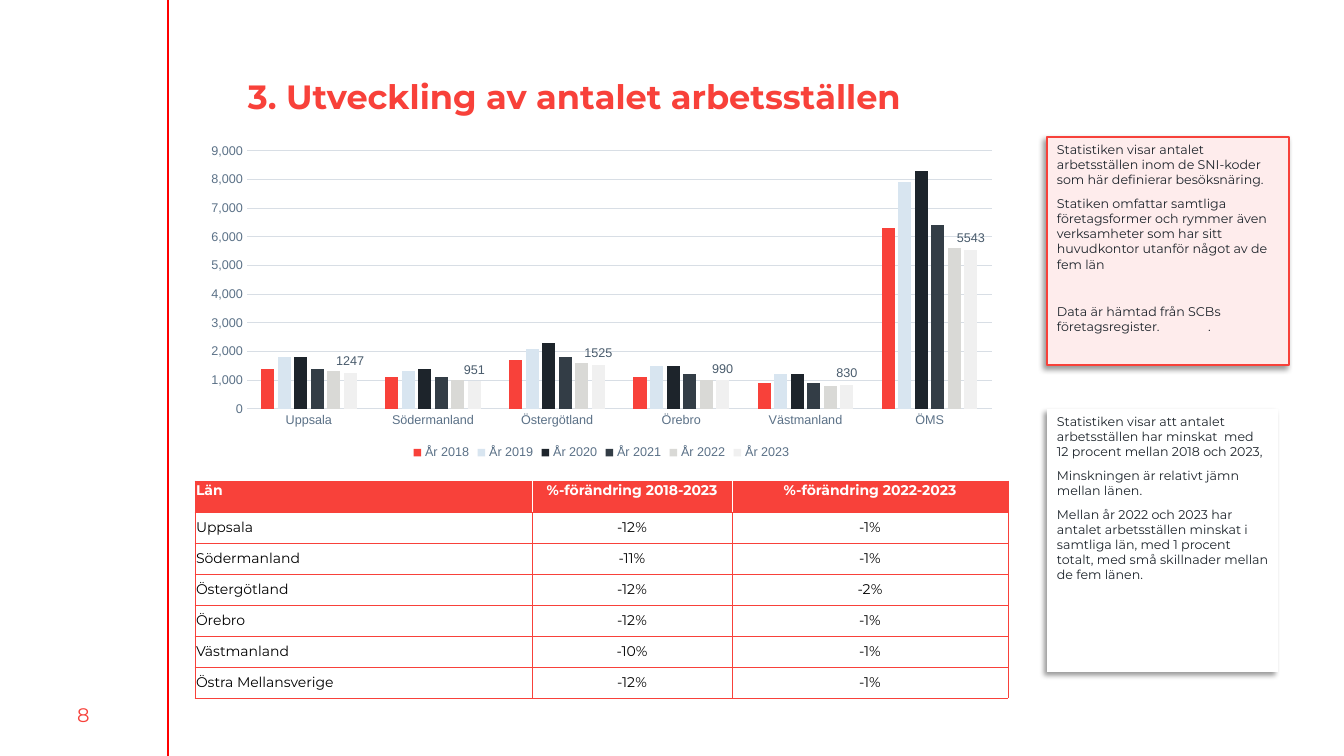
from dataclasses import dataclass

from lxml import etree
from pptx import Presentation
from pptx.chart.data import CategoryChartData
from pptx.dml.color import RGBColor
from pptx.enum.chart import XL_CHART_TYPE, XL_LABEL_POSITION, XL_LEGEND_POSITION, XL_TICK_MARK
from pptx.enum.shapes import MSO_CONNECTOR, MSO_SHAPE
from pptx.enum.text import MSO_ANCHOR, MSO_AUTO_SIZE, PP_ALIGN
from pptx.oxml.ns import qn
from pptx.util import Emu, Pt

COLUMN_CLUSTERED = XL_CHART_TYPE.COLUMN_CLUSTERED
OUTSIDE_END = XL_LABEL_POSITION.OUTSIDE_END
BOTTOM = XL_LEGEND_POSITION.BOTTOM
NO_TICK = XL_TICK_MARK.NONE
STRAIGHT = MSO_CONNECTOR.STRAIGHT
RECTANGLE = MSO_SHAPE.RECTANGLE
TOP, MIDDLE = MSO_ANCHOR.TOP, MSO_ANCHOR.MIDDLE
NO_AUTOFIT = MSO_AUTO_SIZE.NONE
LEFT, CENTER = PP_ALIGN.LEFT, PP_ALIGN.CENTER

# Content
TITLE = "3. Utveckling av antalet arbetsställen"
PAGE_NUMBER = "8"
CATEGORIES = ["Uppsala", "Södermanland", "Östergötland", "Örebro", "Västmanland", "ÖMS"]
SERIES = [
    ("År 2018", "F8413A", [1400, 1100, 1700, 1100, 900, 6300]),
    ("År 2019", "D8E5F0", [1800, 1300, 2100, 1500, 1200, 7900]),
    ("År 2020", "1D242B", [1800, 1400, 2300, 1500, 1200, 8300]),
    ("År 2021", "333D46", [1400, 1100, 1800, 1200, 900, 6400]),
    ("År 2022", "D9D9D6", [1300, 1000, 1600, 1000, 800, 5600]),
    ("År 2023", "F0F0F0", [1247, 951, 1525, 990, 830, 5543]),
]
TABLE_ROWS = [
    ("Län", "%-förändring 2018-2023", "%-förändring 2022-2023"),
    ("Uppsala", "-12%", "-1%"),
    ("Södermanland", "-11%", "-1%"),
    ("Östergötland", "-12%", "-2%"),
    ("Örebro", "-12%", "-1%"),
    ("Västmanland", "-10%", "-1%"),
    ("Östra Mellansverige", "-12%", "-1%"),
]
# Each paragraph: space before in points, text
SOURCE_NOTE = [
    (0, "Statistiken visar antalet arbetsställen inom de SNI-koder som här definierar besöksnäring."),
    (3, "Statiken omfattar samtliga företagsformer och rymmer även verksamheter "
        "som har sitt huvudkontor utanför något av de fem län"),
    (20, "Data är hämtad från SCBs företagsregister.\t."),
]
RESULT_NOTE = [
    (0, "Statistiken visar att antalet arbetsställen har minskat  med 12 procent mellan 2018 och 2023,"),
    (3, "Minskningen är relativt jämn mellan länen."),
    (3, "Mellan år 2022 och 2023 har antalet arbetsställen minskat i samtliga län, "
        "med 1 procent totalt, med små skillnader mellan de fem länen."),
]


@dataclass(frozen=True)
class Theme:
    heading_font: str = "Montserrat"
    chart_font: str = "Arial"
    red: str = "F8413A"
    frame_red: str = "F7413A"
    rule_red: str = "FF0000"
    pink: str = "FEECEC"
    white: str = "FFFFFF"
    black: str = "000000"
    ink: str = "1D242B"
    axis_text: str = "5B7187"
    label_text: str = "495B6C"
    grid: str = "D8DEE5"
    title_size: int = 24
    page_size: int = 14
    table_size: int = 10
    small_size: int = 9


THEME = Theme()

# Layout in px
PX = 12192000 / 1344
SLIDE_SIZE = (1344, 756)
RULE_X = 168
TITLE_BOX = (243, 71, 1035, 90)
PAGE_BOX = (0, 695, 167, 40)
CHART_BOX = (195, 137, 813, 327)
TABLE_AT = (195, 481)
COLUMN_WIDTHS = (337, 200, 276)
ROW_HEIGHT = 31
NOTES = [
    ((1047, 137, 242, 228), THEME.pink, THEME.frame_red, SOURCE_NOTE),
    ((1047, 409, 231, 263), THEME.white, None, RESULT_NOTE),
]


def px(*lengths):
    return [Emu(round(length * PX)) for length in lengths]


def set_all(target, **values):
    for name, value in values.items():
        setattr(target, name, value)


def style_font(font, size, color, name=THEME.heading_font, bold=False):
    set_all(font, size=Pt(size), name=name, bold=bold)
    font.color.rgb = RGBColor.from_string(color)


def style_line(line, color, width):
    line.color.rgb = RGBColor.from_string(color)
    line.width = Pt(width)


def paint(fill, color):
    fill.solid()
    fill.fore_color.rgb = RGBColor.from_string(color)


def add_color(parent, color):
    return etree.SubElement(parent, qn("a:srgbClr"), val=color)


def add_shadow(shape):
    shape.shadow.inherit = False
    effects = shape._element.spPr.find(qn("a:effectLst"))
    shadow = etree.SubElement(effects, qn("a:outerShdw"), blurRad=str(Pt(4)), dist=str(Pt(3)),
                              dir=str(135 * 60000), algn="tr", rotWithShape="0")
    etree.SubElement(add_color(shadow, THEME.black), qn("a:alpha"), val="40000")


def add_borders(cell, colors):
    properties = cell._tc.get_or_add_tcPr()
    for index, (side, color) in enumerate(zip("LRTB", colors)):
        border = etree.Element(qn(f"a:ln{side}"), w=str(Pt(0.5)))
        add_color(etree.SubElement(border, qn("a:solidFill")), color)
        properties.insert(index, border)


def add_title(slide):
    title = slide.shapes.title
    set_all(title, **dict(zip(("left", "top", "width", "height"), px(*TITLE_BOX))))
    frame = title.text_frame
    frame.text = TITLE
    inset = px(5)[0]
    set_all(frame, vertical_anchor=TOP, auto_size=NO_AUTOFIT, word_wrap=True, margin_left=inset,
            margin_top=inset, margin_right=inset, margin_bottom=inset)
    frame.paragraphs[0].alignment = LEFT
    style_font(frame.paragraphs[0].font, THEME.title_size, THEME.red, bold=True)


def add_margin(slide):
    rule = slide.shapes.add_connector(STRAIGHT, *px(RULE_X, 0, RULE_X, SLIDE_SIZE[1]))
    style_line(rule.line, THEME.rule_red, 0.75)
    etree.SubElement(rule._element.spPr, qn("a:effectLst"))
    frame = slide.shapes.add_textbox(*px(*PAGE_BOX)).text_frame
    set_all(frame, text=PAGE_NUMBER, word_wrap=True, vertical_anchor=MIDDLE)
    frame.paragraphs[0].alignment = CENTER
    style_font(frame.paragraphs[0].font, THEME.page_size, THEME.frame_red)


def add_note(slide, box, fill, outline, paragraphs):
    note = slide.shapes.add_shape(RECTANGLE, *px(*box))
    paint(note.fill, fill)
    if outline:
        style_line(note.line, outline, 1)
    else:
        note.line.fill.background()
    add_shadow(note)
    frame = note.text_frame
    set_all(frame, word_wrap=True, vertical_anchor=TOP)
    for index, (space_before, text) in enumerate(paragraphs):
        paragraph = frame.add_paragraph() if index else frame.paragraphs[0]
        paragraph.add_run().text = text
        set_all(paragraph, alignment=LEFT, space_before=Pt(space_before), space_after=Pt(3))
        style_font(paragraph.font, THEME.small_size, THEME.ink)


def add_change_table(slide):
    size = (sum(COLUMN_WIDTHS), ROW_HEIGHT * len(TABLE_ROWS))
    table = slide.shapes.add_table(len(TABLE_ROWS), len(COLUMN_WIDTHS), *px(*TABLE_AT, *size)).table
    set_all(table, first_row=False, horz_banding=False)
    for column, width in zip(table.columns, px(*COLUMN_WIDTHS)):
        column.width = width
    last = len(COLUMN_WIDTHS) - 1
    for r, row in enumerate(TABLE_ROWS):
        table.rows[r].height = px(ROW_HEIGHT)[0]
        header = r == 0
        inner = THEME.white if header else THEME.red
        for c, text in enumerate(row):
            cell = table.cell(r, c)
            one = px(1)[0]
            set_all(cell, text=text, vertical_anchor=TOP if header else MIDDLE,
                    margin_left=one, margin_top=one, margin_right=one, margin_bottom=0)
            paragraph = cell.text_frame.paragraphs[0]
            paragraph.alignment = CENTER if c else LEFT
            style_font(paragraph.font, THEME.table_size, THEME.white if header else THEME.black, bold=header)
            if header:
                paint(cell.fill, THEME.red)
            else:
                cell.fill.background()
            add_borders(cell, (inner if c else THEME.red, inner if c < last else THEME.red,
                               THEME.red, THEME.red))


def add_workplace_chart(slide):
    data = CategoryChartData()
    data.categories = CATEGORIES
    for name, _, values in SERIES:
        data.add_series(name, values)
    chart = slide.shapes.add_chart(COLUMN_CLUSTERED, *px(*CHART_BOX), data).chart
    set_all(chart, has_title=False, has_legend=True)
    style_font(chart.font, THEME.table_size, THEME.ink, THEME.chart_font)
    set_all(chart.legend, position=BOTTOM, include_in_layout=False)
    plot = chart.plots[0]
    set_all(plot, gap_width=219, overlap=-27, vary_by_categories=False)
    for series, (_, color, _) in zip(plot.series, SERIES):
        paint(series.format.fill, color)

    # Axes and legend
    categories, values = chart.category_axis, chart.value_axis
    for axis in (categories, values):
        set_all(axis, major_tick_mark=NO_TICK, minor_tick_mark=NO_TICK)
    for part in (categories.tick_labels, values.tick_labels, chart.legend):
        style_font(part.font, THEME.small_size, THEME.axis_text, THEME.chart_font)
    style_line(categories.format.line, THEME.grid, 0.75)
    set_all(values, minimum_scale=0, maximum_scale=9000, major_unit=1000, has_major_gridlines=True)
    style_line(values.major_gridlines.format.line, THEME.grid, 0.75)
    values.format.line.fill.background()
    set_all(values.tick_labels, number_format="#,##0", number_format_is_linked=False)

    # Values above the latest year
    labels = plot.series[len(SERIES) - 1].data_labels
    set_all(labels, show_value=True, position=OUTSIDE_END)
    style_font(labels.font, THEME.small_size, THEME.label_text, THEME.chart_font)


def main():
    presentation = Presentation()
    presentation.slide_width, presentation.slide_height = px(*SLIDE_SIZE)
    slide = presentation.slides.add_slide(presentation.slide_layouts[5])
    add_margin(slide)
    add_title(slide)
    for note in NOTES:
        add_note(slide, *note)
    add_change_table(slide)
    add_workplace_chart(slide)
    presentation.save("out.pptx")


if __name__ == "__main__":
    main()
